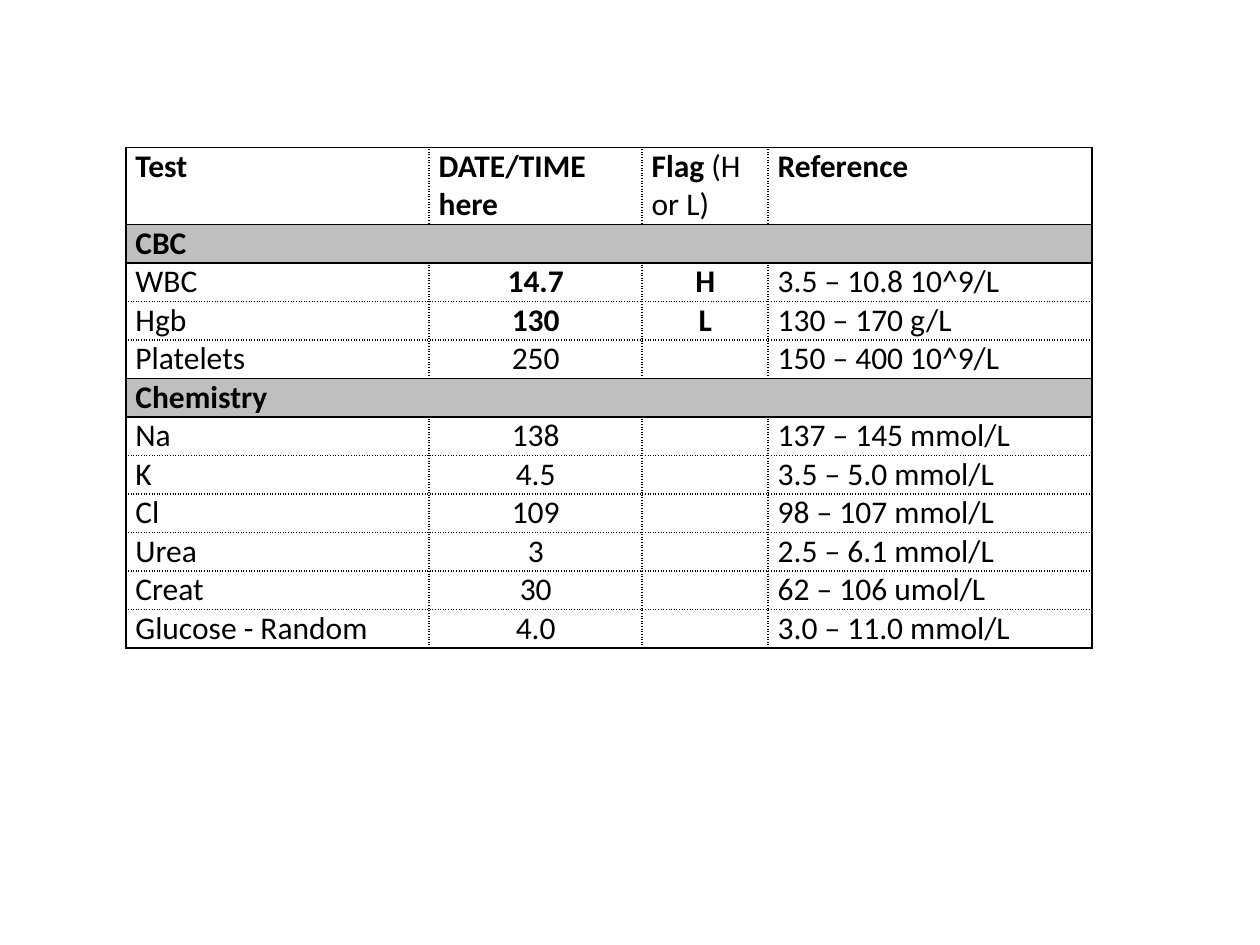
import pptx
import pptx.dml.color
import pptx.enum.text
import pptx.util
from dataclasses import dataclass
from lxml import etree
from pptx.oxml.ns import qn

Pt = pptx.util.Pt
CENTER = pptx.enum.text.PP_ALIGN.CENTER


@dataclass(frozen=True)
class Theme:
    font: str = "Calibri"
    size: float = 18
    ink: str = "000000"
    paper: str = "FFFFFF"
    band: str = "BFBFBF"
    line: float = 1


THEME = Theme()
LEFT, TOP, ROW = 72, 84.2, 22
WIDTHS = [173.3, 121.7, 72, 185]
HEADS = ["Test", "DATE/TIME here", "Flag ", "Reference"]
# Each group: its name, then test, value, flag, reference
GROUPS = {
    "CBC": [
        ("WBC", "14.7", "H", "3.5 – 10.8 10^9/L"),
        ("Hgb", "130", "L", "130 – 170 g/L"),
        ("Platelets", "250", "", "150 – 400 10^9/L"),
    ],
    "Chemistry": [
        ("Na", "138", "", "137 – 145 mmol/L"),
        ("K", "4.5", "", "3.5 – 5.0 mmol/L"),
        ("Cl", "109", "", "98 – 107 mmol/L"),
        ("Urea", "3", "", "2.5 – 6.1 mmol/L"),
        ("Creat", "30", "", "62 – 106 umol/L"),
        ("Glucose - Random", "4.0", "", "3.0 – 11.0 mmol/L"),
    ],
}


def color(code):
    return pptx.dml.color.RGBColor.from_string(code)


def write(cell, text, bold=False, align=None):
    """Add a run of text to the cell's paragraph."""
    para = cell.text_frame.paragraphs[0]
    if align is not None:
        para.alignment = align
    if not text:
        return
    run = para.add_run()
    run.text = text
    font = run.font
    font.name, font.size, font.bold = THEME.font, Pt(THEME.size), bold
    font.color.rgb = color(THEME.ink)


def edge(cell, side, solid):
    """Draw one border, solid or dotted."""
    line = etree.SubElement(cell._tc.get_or_add_tcPr(), qn("a:ln" + side),
                            w=str(Pt(THEME.line)))
    fill = etree.SubElement(line, qn("a:solidFill"))
    etree.SubElement(fill, qn("a:srgbClr"), val=THEME.ink)
    etree.SubElement(line, qn("a:prstDash"), val="solid" if solid else "sysDot")


def frame(cell, solid, fill=None):
    """Set margins, borders and fill; solid names the solid sides."""
    cell.margin_left = cell.margin_right = Pt(5.4)
    cell.margin_top = cell.margin_bottom = 0
    for side in "LRTB":
        edge(cell, side, side in solid)
    if fill:
        cell.fill.solid()
        cell.fill.fore_color.rgb = color(fill)
    else:
        cell.fill.background()


def grid(slide, count):
    """Add a plain table with set column widths and row heights."""
    shape = slide.shapes.add_table(count, len(WIDTHS), Pt(LEFT), Pt(TOP),
                                   Pt(sum(WIDTHS)), Pt(ROW * (count + 1)))
    table = shape.table
    table.first_row = table.horz_banding = False
    for col, width in zip(table.columns, WIDTHS):
        col.width = Pt(width)
    for i, row in enumerate(table.rows):
        row.height = Pt(ROW if i else 2 * ROW)
    return table


def sides(col):
    """Outer side that is solid for a cell in this column."""
    return {0: "L", len(WIDTHS) - 1: "R"}.get(col, "")


def head(table):
    for col, text in enumerate(HEADS):
        cell = table.cell(0, col)
        frame(cell, "TB" + sides(col), THEME.paper)
        write(cell, text, bold=True)
    write(table.cell(0, 2), "(H or L)")


def band(table, row, name):
    for col in range(len(WIDTHS)):
        frame(table.cell(row, col), "LRTB", THEME.band)
    first = table.cell(row, 0)
    first.merge(table.cell(row, len(WIDTHS) - 1))
    write(first, name, bold=True)


def result(table, row, test, ends):
    """Fill a test row; flagged values are bold."""
    for col, text in enumerate(test):
        cell = table.cell(row, col)
        middle = col in (1, 2)
        frame(cell, ends + sides(col))
        write(cell, text, bold=middle and bool(test[2]),
              align=CENTER if middle else None)


def main():
    deck = pptx.Presentation()
    deck.slide_width, deck.slide_height = Pt(720), Pt(540)
    slide = deck.slides.add_slide(deck.slide_layouts[6])

    # Lab results table
    count = 1 + sum(1 + len(tests) for tests in GROUPS.values())
    table = grid(slide, count)
    head(table)
    row = 1
    for name, tests in GROUPS.items():
        band(table, row, name)
        for i, test in enumerate(tests, 1):
            ends = ("T" if i == 1 else "") + ("B" if i == len(tests) else "")
            result(table, row + i, test, ends)
        row += 1 + len(tests)

    deck.save("out.pptx")


if __name__ == "__main__":
    main()
